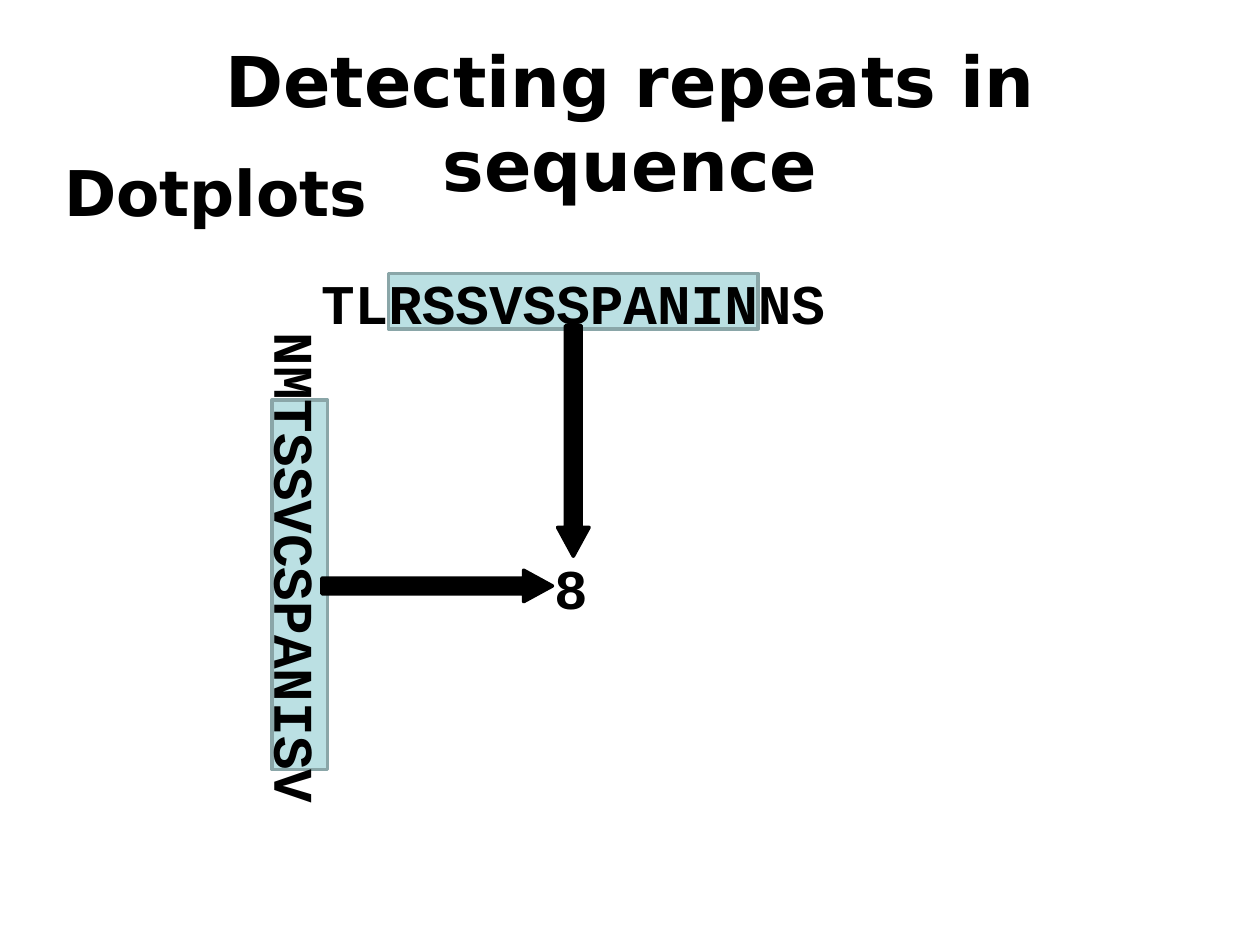
from pptx import Presentation
from pptx.dml.color import RGBColor
from pptx.enum.shapes import MSO_SHAPE
from pptx.enum.text import MSO_AUTO_SIZE, PP_ALIGN
from pptx.util import Inches, Pt

COLORS = {"ink": "000000", "band": "BBE0E3", "edge": "8AA6A8"}
SANS, MONO = "DejaVu Sans", "Courier New"
SIZE = 32
STEP = SIZE * 0.6 / 72
PAD, SLACK = 0.1, 0.06
SKIP, SPAN = 2, 11

HEADS = [
    ("Dotplots", (0.41, 1.17, 9.08, 1.51), 36, PP_ALIGN.LEFT),
    ("Detecting repeats in sequence", (0.2, 0.25, 9.6, 0.77), 40, PP_ALIGN.CENTER),
]
ROWS = [
    {"text": "TLRSSVSSPANINNS", "start": 2.45, "mid": 2.4, "band": 2.39, "turn": 0},
    {"text": "NMTSSVCSPANISV", "start": 2.54, "mid": 2.35, "band": 2.38, "turn": 90},
]
SCORE = ("8", (4.3, 4.34, 0.47, 0.64))
ARROWS = [((4.55, 3.5), 0), ((3.47, 4.65), 270)]


def color(name):
    return RGBColor.from_string(COLORS[name])


def center(x, y, wide, high):
    return x - wide / 2, y - high / 2, wide, high


def along(start, size, mid, high, turn):
    point = (start + size / 2, mid)
    if turn:
        point = point[::-1]
    return center(*point, size, high)


def write(slide, text, box, size, face, align=PP_ALIGN.LEFT, wrap=False, turn=0):
    shape = slide.shapes.add_textbox(*map(Inches, box))
    shape.rotation = turn
    frame = shape.text_frame
    frame.word_wrap = wrap
    frame.auto_size = MSO_AUTO_SIZE.SHAPE_TO_FIT_TEXT
    para = frame.paragraphs[0]
    para.alignment = align
    run = para.add_run()
    run.text = text
    for key, value in {"name": face, "size": Pt(size), "bold": True}.items():
        setattr(run.font, key, value)
    run.font.color.rgb = color("ink")


def draw(slide, kind, box, fill, line, turn=0):
    shape = slide.shapes.add_shape(kind, *map(Inches, box))
    shape.rotation = turn
    shape.shadow.inherit = False
    shape.fill.solid()
    shape.fill.fore_color.rgb = color(fill)
    shape.line.color.rgb = color(line)
    shape.line.width = Pt(2)
    return shape


def main():
    deck = Presentation()
    deck.slide_width, deck.slide_height = Inches(10), Inches(7.5)
    slide = deck.slides.add_slide(deck.slide_layouts[6])

    for row in ROWS:
        start = row["start"] + PAD + SKIP * STEP
        box = along(start, SPAN * STEP, row["band"], 0.44, row["turn"])
        draw(slide, MSO_SHAPE.RECTANGLE, box, "band", "edge", -row["turn"])
    for row in ROWS:
        size = len(row["text"]) * STEP + 2 * PAD + SLACK
        box = along(row["start"], size, row["mid"], 0.64, row["turn"])
        write(slide, row["text"], box, SIZE, MONO, turn=row["turn"])
    for point, turn in ARROWS:
        box = center(*point, 0.25, 1.83)
        arrow = draw(slide, MSO_SHAPE.DOWN_ARROW, box, "ink", "ink", turn)
        arrow.adjustments[0] = 0.5
        arrow.adjustments[1] = 0.915
    write(slide, *SCORE, SIZE, MONO)
    for text, box, size, align in HEADS:
        write(slide, text, box, size, SANS, align, wrap=True)

    deck.save("out.pptx")


if __name__ == "__main__":
    main()
